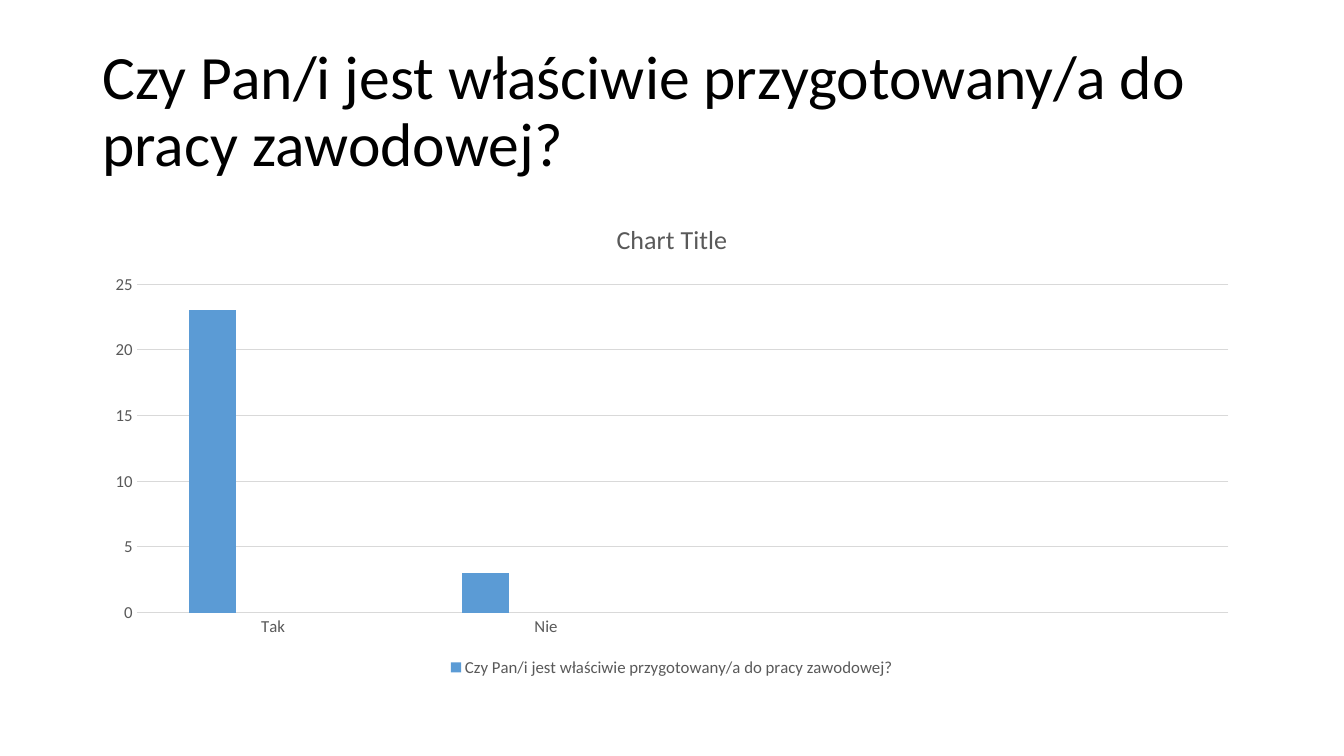
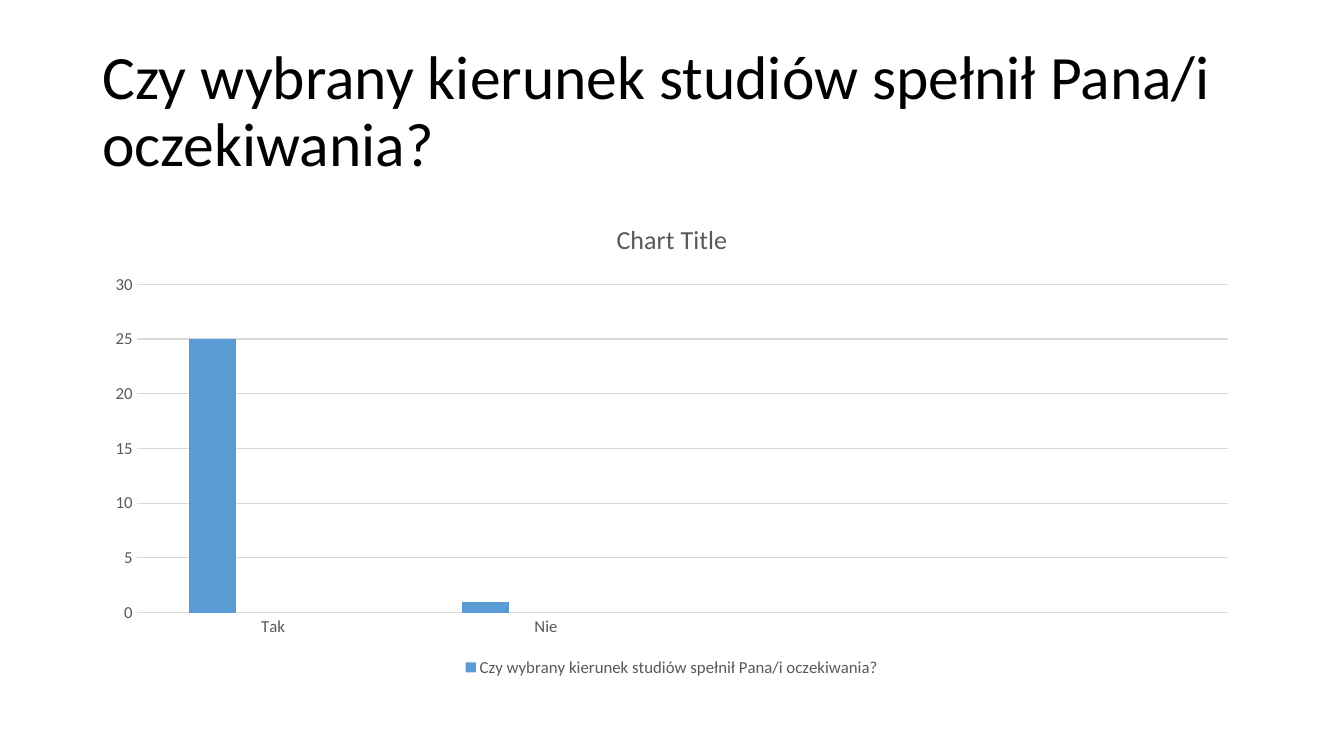
"""Build two survey slides, each with a question and a column chart of answers."""

from dataclasses import dataclass

from lxml.etree import SubElement
from pptx import Presentation
from pptx.chart.axis import CategoryAxis, ValueAxis
from pptx.chart.chart import Chart
from pptx.chart.data import CategoryChartData
from pptx.dml.color import RGBColor
from pptx.dml.line import LineFormat
from pptx.enum.chart import XL_CHART_TYPE, XL_LEGEND_POSITION, XL_TICK_MARK
from pptx.enum.text import MSO_ANCHOR
from pptx.oxml.ns import qn
from pptx.slide import Slide
from pptx.text.text import Font
from pptx.util import Emu, Pt

EMU_PER_PX = 9525
SLIDE_WIDTH, SLIDE_HEIGHT = 1280, 720
BLANK_LAYOUT = 6

FONT_NAME = "Calibri"
BLACK = "000000"
LABEL_GREY = "595959"
GRID_GREY = "D9D9D9"
SERIES_COLORS = ("5B9BD5", "ED7D31", "A5A5A5")
CATEGORIES = ("Tak", "Nie", "", "")


@dataclass(frozen=True)
class Box:
    left: int
    top: int
    width: int
    height: int

    def emu(self) -> tuple[Emu, Emu, Emu, Emu]:
        return px(self.left), px(self.top), px(self.width), px(self.height)


@dataclass(frozen=True)
class Survey:
    question: str
    answers: tuple[int, int]
    axis_maximum: int


TITLE_BOX = Box(88, 38, 1104, 139)
CHART_BOX = Box(88, 192, 1104, 457)

SURVEYS = (
    Survey("Czy Pan/i jest właściwie przygotowany/a do pracy zawodowej?", (23, 3), 25),
    Survey("Czy wybrany kierunek studiów spełnił Pana/i oczekiwania?", (25, 1), 30),
)


def px(length: int) -> Emu:
    return Emu(length * EMU_PER_PX)


def color(value: str) -> RGBColor:
    return RGBColor.from_string(value)


def style_font(font: Font, size: float, font_color: str) -> None:
    font.name = FONT_NAME
    font.size = Pt(size)
    font.bold = False
    font.color.rgb = color(font_color)


def style_line(line: LineFormat) -> None:
    line.color.rgb = color(GRID_GREY)
    line.width = Pt(0.75)


def add_title(slide: Slide, text: str) -> None:
    frame = slide.shapes.add_textbox(*TITLE_BOX.emu()).text_frame
    frame.word_wrap = True
    frame.vertical_anchor = MSO_ANCHOR.MIDDLE
    paragraph = frame.paragraphs[0]
    paragraph.line_spacing = 0.9
    run = paragraph.add_run()
    run.text = text
    style_font(run.font, 44, BLACK)


def style_axis(axis: CategoryAxis | ValueAxis) -> None:
    axis.major_tick_mark = XL_TICK_MARK.NONE
    axis.minor_tick_mark = XL_TICK_MARK.NONE
    style_font(axis.tick_labels.font, 12, LABEL_GREY)


def style_axes(chart: Chart, maximum: int) -> None:
    style_axis(chart.category_axis)
    style_line(chart.category_axis.format.line)
    value_axis = chart.value_axis
    style_axis(value_axis)
    value_axis.format.line.fill.background()
    value_axis.minimum_scale = 0
    value_axis.maximum_scale = maximum
    value_axis.major_unit = 5
    style_line(value_axis.major_gridlines.format.line)


def add_chart_title(chart: Chart) -> None:
    chart.has_title = True
    run = chart.chart_title.text_frame.paragraphs[0].add_run()
    run.text = "Chart Title"
    style_font(run.font, 18.6, LABEL_GREY)


def add_legend(chart: Chart) -> None:
    chart.has_legend = True
    legend = chart.legend
    legend.position = XL_LEGEND_POSITION.BOTTOM
    legend.include_in_layout = False
    style_font(legend.font, 12, LABEL_GREY)
    previous = legend._element.find(qn("c:legendPos"))
    for index in range(1, len(SERIES_COLORS)):
        entry = SubElement(legend._element, qn("c:legendEntry"))
        SubElement(entry, qn("c:idx")).set("val", str(index))
        SubElement(entry, qn("c:delete")).set("val", "1")
        previous.addnext(entry)
        previous = entry


def add_answer_chart(slide: Slide, survey: Survey) -> None:
    data = CategoryChartData()
    data.categories = CATEGORIES
    data.add_series(survey.question, (*survey.answers, None, None))
    for number in range(2, len(SERIES_COLORS) + 1):
        data.add_series(f"Series {number}", (None,) * len(CATEGORIES))
    chart = slide.shapes.add_chart(
        XL_CHART_TYPE.COLUMN_CLUSTERED, *CHART_BOX.emu(), data
    ).chart
    style_font(chart.font, 10, BLACK)
    plot = chart.plots[0]
    plot.vary_by_categories = False
    plot.gap_width = 219
    plot.overlap = -27
    for series, series_color in zip(plot.series, SERIES_COLORS):
        series.format.fill.solid()
        series.format.fill.fore_color.rgb = color(series_color)
    add_chart_title(chart)
    style_axes(chart, survey.axis_maximum)
    add_legend(chart)


def main() -> None:
    presentation = Presentation()
    presentation.slide_width = px(SLIDE_WIDTH)
    presentation.slide_height = px(SLIDE_HEIGHT)
    for survey in SURVEYS:
        slide = presentation.slides.add_slide(presentation.slide_layouts[BLANK_LAYOUT])
        add_title(slide, survey.question)
        add_answer_chart(slide, survey)
    presentation.save("out.pptx")


if __name__ == "__main__":
    main()
